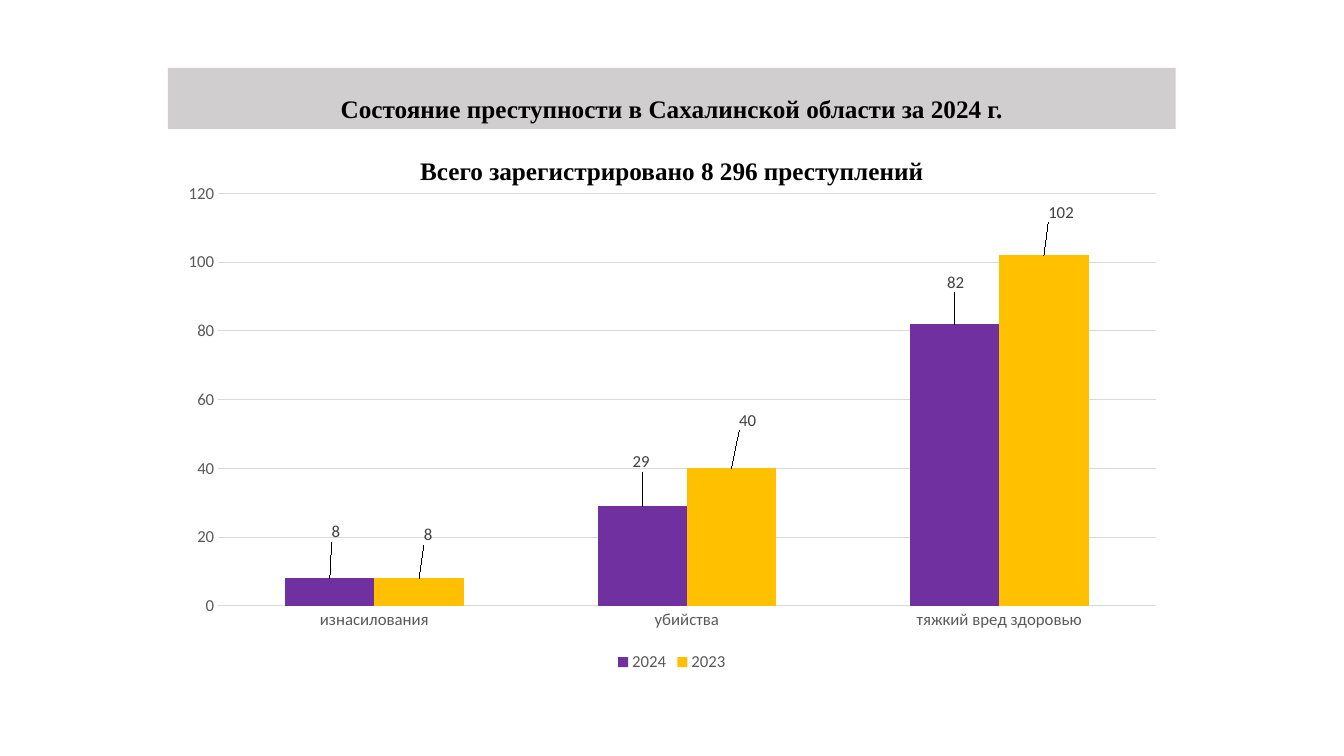
from dataclasses import dataclass

from lxml.etree import SubElement
from pptx import Presentation
from pptx.chart.data import CategoryChartData
from pptx.dml.color import RGBColor
from pptx.enum.chart import XL_CHART_TYPE as ChartType
from pptx.enum.chart import XL_LABEL_POSITION as LabelPosition
from pptx.enum.chart import XL_LEGEND_POSITION as LegendPosition
from pptx.enum.chart import XL_TICK_MARK as TickMark
from pptx.enum.text import MSO_ANCHOR as Anchor
from pptx.enum.text import MSO_AUTO_SIZE as AutoSize
from pptx.enum.text import PP_ALIGN as Align
from pptx.oxml.ns import qn
from pptx.util import Cm, Pt


@dataclass(frozen=True)
class Theme:
    heading_font: str = "Times New Roman"
    chart_font: str = "Calibri"
    heading_size: int = 18
    chart_size: int = 12
    black: str = "000000"
    banner: str = "D0CECE"
    axis_text: str = "595959"
    label_text: str = "404040"
    grid: str = "D9D9D9"
    bars: tuple = ("7030A0", "FFC000")


def style_font(font, name, size, color, bold=False):
    font.name = name
    font.size = Pt(size)
    font.bold = bold
    font.color.rgb = RGBColor.from_string(color)


def add_layout(parent, position, **values):
    layout = SubElement(parent, qn("c:layout"))
    parent.insert(position, layout)
    manual = SubElement(layout, qn("c:manualLayout"))
    for tag, value in values.items():
        SubElement(manual, qn(f"c:{tag}")).set("val", str(value))


theme = Theme()
left, width = Cm(4.23), Cm(25.4)

presentation = Presentation()
presentation.slide_width = Cm(33.87)
presentation.slide_height = Cm(19.05)
slide = presentation.slides.add_slide(presentation.slide_layouts[0])
title, subtitle = slide.placeholders

title.fill.solid()
title.fill.fore_color.rgb = RGBColor.from_string(theme.banner)

headings = [
    (title, "Состояние преступности в Сахалинской области за 2024 г.",
     Cm(1.71), Cm(1.54), Anchor.BOTTOM, 0.9, 0),
    (subtitle, "Всего зарегистрировано 8 296 преступлений",
     Cm(3.94), Cm(0.92), Anchor.TOP, 0.8, 10),
]
for shape, text, top, height, anchor, line_spacing, space_before in headings:
    shape.left, shape.top, shape.width, shape.height = left, top, width, height
    frame = shape.text_frame
    frame.word_wrap = True
    frame.auto_size = AutoSize.NONE
    frame.vertical_anchor = anchor
    paragraph = frame.paragraphs[0]
    paragraph.alignment = Align.CENTER
    paragraph.line_spacing = line_spacing
    paragraph.space_before = Pt(space_before)
    run = paragraph.add_run()
    run.text = text
    style_font(run.font, theme.heading_font, theme.heading_size, theme.black, True)

crime_data = CategoryChartData()
crime_data.categories = ["изнасилования", "убийства", "тяжкий вред здоровью"]
crime_data.add_series("2024", (8, 29, 82))
crime_data.add_series("2023", (8, 40, 102))
chart = slide.shapes.add_chart(
    ChartType.COLUMN_CLUSTERED, left, Cm(4.37), width, Cm(12.67), crime_data
).chart
chart.has_title = False
style_font(chart.font, theme.chart_font, 10, theme.black)

chart.has_legend = True
chart.legend.position = LegendPosition.BOTTOM
chart.legend.include_in_layout = False
style_font(chart.legend.font, theme.chart_font, theme.chart_size, theme.axis_text)

for axis in (chart.category_axis, chart.value_axis):
    axis.major_tick_mark = TickMark.NONE
    axis.minor_tick_mark = TickMark.NONE
    axis.format.line.fill.background()
    style_font(axis.tick_labels.font, theme.chart_font, theme.chart_size, theme.axis_text)

value_axis = chart.value_axis
value_axis.minimum_scale = 0
value_axis.maximum_scale = 120
value_axis.major_unit = 20
value_axis.has_major_gridlines = True
grid_line = value_axis.major_gridlines.format.line
grid_line.color.rgb = RGBColor.from_string(theme.grid)
grid_line.width = Pt(0.75)

plot = chart.plots[0]
plot.gap_width = 150
plot.overlap = 0
plot.vary_by_categories = False

plot_area = chart.element.find(f".//{qn('c:plotArea')}")
for layout in plot_area.findall(qn("c:layout")):
    plot_area.remove(layout)
add_layout(plot_area, 0, layoutTarget="inner", xMode="edge", yMode="edge",
           x=0.05, y=0.04, w=0.93, h=0.82)

label_shifts_percent = [
    [(0.6, -6.4), (-0.1, -6), (0.1, -5.4)],
    [(0.9, -5.8), (1.6, -6.7), (1.7, -5.8)],
]
for series, color, shifts in zip(plot.series, theme.bars, label_shifts_percent):
    series.format.fill.solid()
    series.format.fill.fore_color.rgb = RGBColor.from_string(color)
    labels = series.data_labels
    labels.show_value = True
    labels.position = LabelPosition.OUTSIDE_END
    style_font(labels.font, theme.chart_font, theme.chart_size, theme.label_text)
    for index in range(len(shifts)):
        label = series.points[index].data_label
        label.position = LabelPosition.OUTSIDE_END
        style_font(label.font, theme.chart_font, theme.chart_size, theme.label_text)
    label_nodes = plot_area.findall(qn("c:barChart") + "/" + qn("c:ser"))[
        series.index].findall(f".//{qn('c:dLbl')}")
    for node, (shift_x, shift_y) in zip(label_nodes, shifts):
        add_layout(node, 1, x=shift_x / 100, y=shift_y / 100)

presentation.save("out.pptx")
